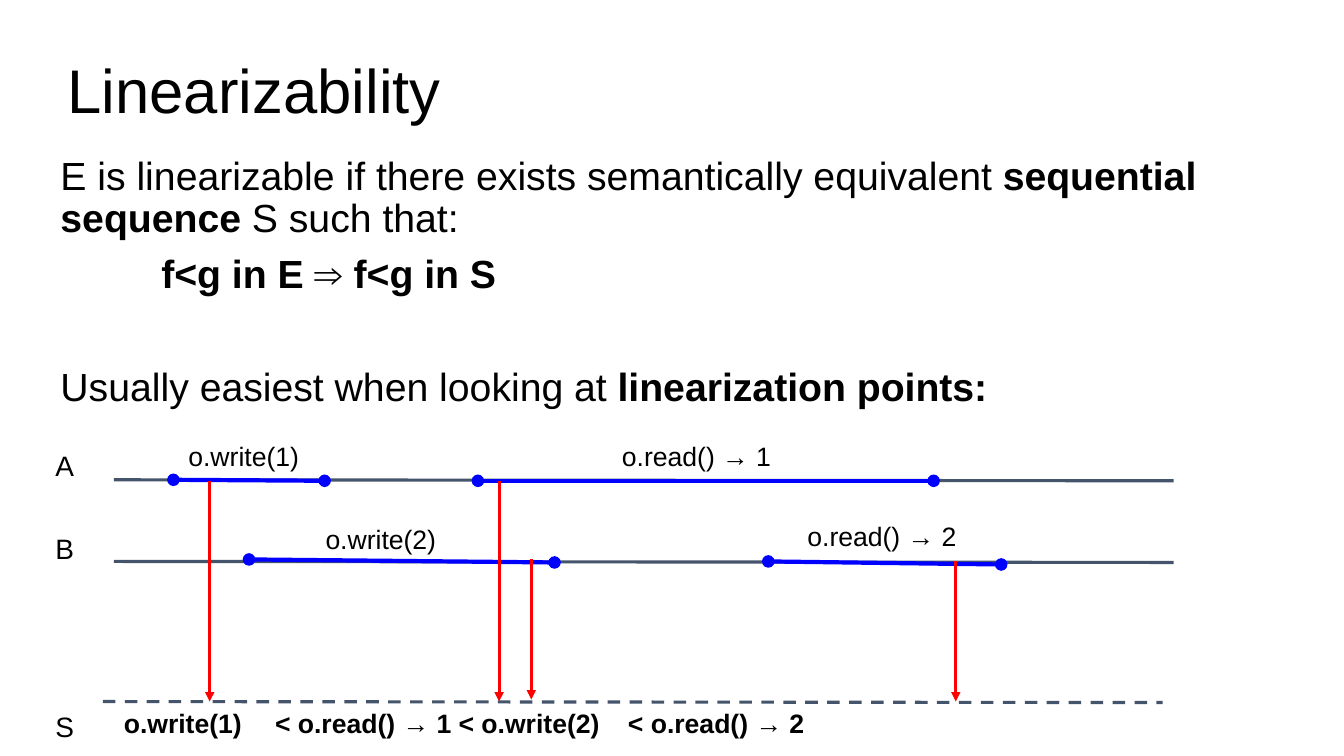
"""Build the Linearizability slide with its timeline of operations."""
from lxml import etree
from pptx import Presentation
from pptx.dml.color import RGBColor
from pptx.enum.dml import MSO_LINE
from pptx.enum.shapes import MSO_CONNECTOR
from pptx.enum.text import MSO_ANCHOR, MSO_AUTO_SIZE
from pptx.oxml.ns import qn
from pptx.util import Pt

PX = 9144
STRAIGHT = MSO_CONNECTOR.STRAIGHT
DASH = MSO_LINE.DASH
TOP, MIDDLE = MSO_ANCHOR.TOP, MSO_ANCHOR.MIDDLE
FIT_SHAPE, NO_FIT = MSO_AUTO_SIZE.SHAPE_TO_FIT_TEXT, MSO_AUTO_SIZE.NONE
COLORS = {"text": "000000", "axis": "44546A", "operation": "0000FF", "point": "FF0000"}

presentation = Presentation()
presentation.slide_width = 1333 * PX
presentation.slide_height = 750 * PX
slide = presentation.slides.add_slide(presentation.slide_layouts[6])


def add_text(paragraphs, left, top, width, height, size=19, inset=10,
             anchor=TOP, fit=FIT_SHAPE, spacing=None, tabs=()):
    """Add a box of paragraphs, each given as (runs, space before, indent)."""
    shape = slide.shapes.add_textbox(left * PX, top * PX, width * PX, height * PX)
    frame = shape.text_frame
    frame.word_wrap = True
    frame.auto_size = fit
    frame.vertical_anchor = anchor
    frame.margin_left = frame.margin_right = inset * PX
    frame.margin_top = frame.margin_bottom = inset * PX
    for number, (runs, before, indent) in enumerate(paragraphs):
        paragraph = frame.add_paragraph() if number else frame.paragraphs[0]
        paragraph.line_spacing = spacing
        paragraph.space_before = Pt(before)
        properties = paragraph._p.get_or_add_pPr()
        properties.set("marL", str(indent * PX))
        properties.set("indent", str(indent * PX))
        if tabs:
            tab_list = etree.SubElement(properties, qn("a:tabLst"))
            for position in tabs:
                etree.SubElement(tab_list, qn("a:tab"), pos=str(position * PX), algn="l")
        for content, bold in runs:
            run = paragraph.add_run()
            run.text = content
            run.font.name = "Arial"
            run.font.size = Pt(size)
            run.font.bold = bold
            run.font.color.rgb = RGBColor.from_string(COLORS["text"])


def add_line(start, end, color, weight=2.25, dash=None, head=None, tail=None):
    """Add a straight line with optional end marks."""
    connector = slide.shapes.add_connector(
        STRAIGHT, start[0] * PX, start[1] * PX, end[0] * PX, end[1] * PX)
    connector.line.color.rgb = RGBColor.from_string(COLORS[color])
    connector.line.width = Pt(weight)
    if dash:
        connector.line.dash_style = dash
    line_properties = connector.line._get_or_add_ln()
    for tag, mark in (("a:headEnd", head), ("a:tailEnd", tail)):
        if mark:
            etree.SubElement(line_properties, qn(tag), type=mark)
    etree.SubElement(connector._element.spPr, qn("a:effectLst"))


add_text([([("Linearizability", False)], 0, 0)], 67, 30, 1200, 125,
         size=44, inset=0, anchor=MIDDLE, fit=NO_FIT, spacing=0.9)

definition = [
    ([("E is linearizable if there exists semantically equivalent ", False),
      ("sequential sequence ", True), ("S such that:", False)], 0, 0),
    ([("f<g in E ⇒ f<g in S", True)], 10, 50),
    ([("Usually easiest when looking at ", False), ("linearization points:", True)], 50, 0),
]
add_text(definition, 60, 155, 1200, 270, size=28, inset=0, fit=NO_FIT, spacing=0.9)

for y in (476, 557):
    add_line((113, y), (1164, y + 1), "axis")

operations = [
    ((172, 476), (322, 477)),
    ((474, 477), (926, 477)),
    ((247, 555), (550, 558)),
    ((762, 557), (993, 560)),
]
for start, end in operations:
    add_line(start, end, "operation", weight=3, head="oval", tail="oval")

operation_labels = [
    ("o.write(1)", 177, 426, 141),
    ("o.write(2)", 313, 509, 141),
    ("o.read() → 1", 607, 426, 187),
    ("o.read() → 2", 791, 506, 173),
]
for label, left, top, width in operation_labels:
    add_text([([(label, False)], 0, 0)], left, top, width, 52)

for x, top, bottom in ((208, 477, 696), (495, 477, 696), (527, 555, 694), (948, 557, 696)):
    add_line((x, top), (x, bottom), "point", tail="triangle")

add_line((102, 696), (1153, 697), "axis", dash=DASH)

for name, top in (("A", 435), ("B", 517), ("S", 694)):
    add_text([([(name, False)], 0, 0)], 45, top, 57, 54, size=20)

sequence = "o.write(1)\t< o.read() → 1 < o.write(2)\t< o.read() → 2"
add_text([([(sequence, True)], 0, 0)], 113, 691, 1132, 52, tabs=(197, 804))

presentation.save("out.pptx")
